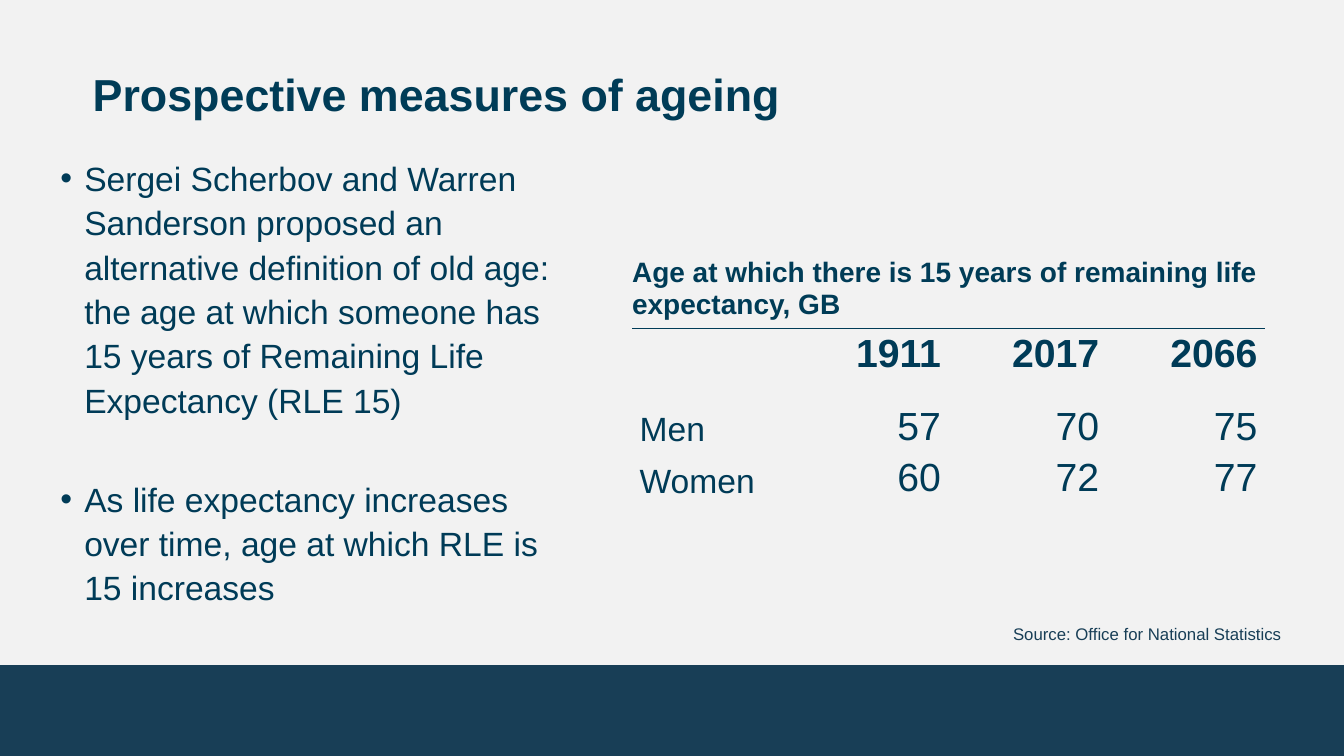
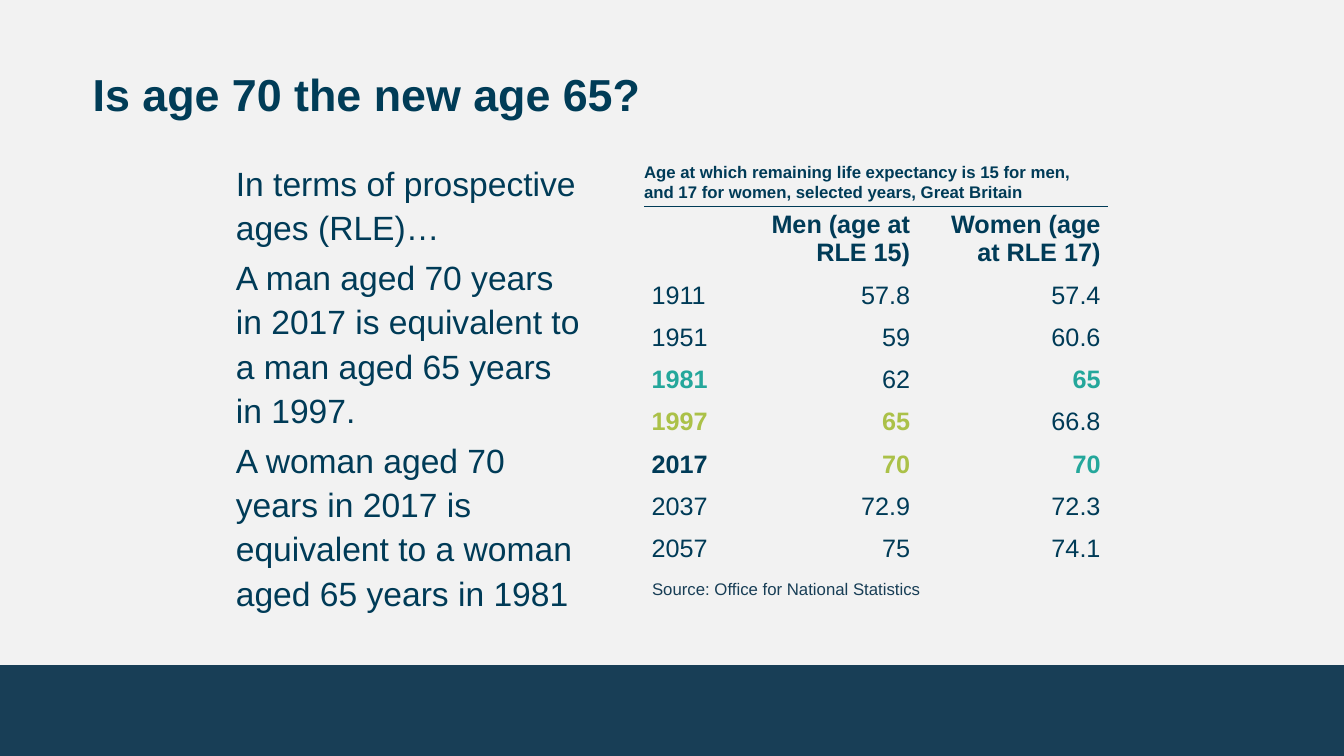
from lxml import etree
from pptx import Presentation
from pptx.dml.color import RGBColor as RGB
from pptx.enum.shapes import MSO_SHAPE as SHAPE
from pptx.enum.text import MSO_ANCHOR as ANCHOR, MSO_AUTO_SIZE as AUTO, PP_ALIGN as ALIGN
from pptx.oxml.ns import qn
from pptx.util import Pt

# Shared look
HUE = {"back": "F2F2F2", "band": "183E56", "title": "003C57",
       "ink": "003B57", "teal": "24A79B", "lime": "ABC148"}
FONT = "Arial"
WIDE, HIGH = 960, 540
BAND = 64.8
BARE = "{2D5ABB26-0587-4C30-8999-92F81FD0307C}"  # table style without grid
SOURCE = "Source: Office for National Statistics"

# Content: boxes are left, top, width, height
SLIDES = [
    {
        "title": "Prospective measures of ageing",
        "body": ["Sergei Scherbov and Warren Sanderson proposed an alternative "
                 "definition of old age: the age at which someone has 15 years of "
                 "Remaining Life Expectancy (RLE 15)",
                 "As life expectancy increases over time, age at which RLE is "
                 "15 increases"],
        "place": (43.2, 106.5, 371, 376.5),
        "style": {"bullet": True, "gap": 35.3},
        "caption": "Age at which there is 15 years of remaining life expectancy, GB",
        "head": (451.5, 183.6, 452, 50),
        "look": {"size": 20, "color": "title", "spacing": 0.95},
        "rows": [["", "1911", "2017", "2066"],
                 ["Men", "57", "70", "75"],
                 ["Women", "60", "72", "77"],
                 [""] * 4],
        "spot": (451.5, 234.7),
        "cols": [113] * 4,
        "tall": (52, 34.6),
        "sizes": (24, 28),
        "marks": {},
        "source": (723.6, 442, 220, 21.6),
    },
    {
        "title": "Is age 70 the new age 65?",
        "body": ["In terms of prospective ages (RLE)…",
                 "A man aged 70 years in 2017 is equivalent to a man aged 65 years "
                 "in 1997.",
                 "A woman aged 70 years in 2017 is equivalent to a woman aged "
                 "65 years in 1981"],
        "place": (168.5, 110, 250, 376.5),
        "style": {},
        "caption": "Age at which remaining life expectancy is 15 for men, "
                   "and 17 for women, selected years, Great Britain",
        "head": (460, 111.6, 331.5, 36),
        "look": {"size": 12, "inset": (0, 3.6, 7.2, 3.6), "anchor": ANCHOR.BOTTOM},
        "rows": [["", "Men (age at RLE 15)", "Women (age at RLE 17)"],
                 ["1911", "57.8", "57.4"],
                 ["1951", "59", "60.6"],
                 ["1981", "62", "65"],
                 ["1997", "65", "66.8"],
                 ["2017", "70", "70"],
                 ["2037", "72.9", "72.3"],
                 ["2057", "75", "74.1"]],
        "spot": (460, 147.6),
        "cols": [69, 126.5, 136],
        "tall": (46, 30.2),
        "sizes": (18, 18),
        "marks": {(3, 0): "teal", (3, 2): "teal", (4, 0): "lime", (4, 1): "lime",
                  (5, 0): "ink", (5, 1): "lime", (5, 2): "teal"},
        "source": (465.8, 409.7, 342.7, 21.6),
    },
]


def write(frame, lines, size=24, color="ink", bold=False, align=ALIGN.LEFT,
          spacing=1, after=0, gap=0, bullet=False):
    """Fill a text frame with one paragraph per line."""
    for i, line in enumerate(lines):
        para = frame.paragraphs[0] if i == 0 else frame.add_paragraph()
        para.text = line
        para.alignment, para.line_spacing = align, spacing
        para.space_before, para.space_after = Pt(gap if i else 0), Pt(after)
        if bullet:
            prop = para._p.get_or_add_pPr()
            prop.set("marL", str(Pt(17)))
            prop.set("indent", str(-Pt(17)))
            etree.SubElement(prop, qn("a:buFont")).set("typeface", FONT)
            etree.SubElement(prop, qn("a:buChar")).set("char", "•")
        font = para.font
        font.name, font.size, font.bold = FONT, Pt(size), bold
        font.color.rgb = RGB.from_string(HUE[color])


def frame_up(shape, inset=(0, 0, 0, 0), anchor=ANCHOR.TOP):
    frame = shape.text_frame
    frame.word_wrap, frame.auto_size = True, AUTO.NONE
    frame.vertical_anchor = anchor
    (frame.margin_left, frame.margin_top,
     frame.margin_right, frame.margin_bottom) = map(Pt, inset)
    return frame


def add_text(slide, box, lines, inset=(0, 3.6, 0, 3.6), anchor=ANCHOR.TOP, **look):
    shape = slide.shapes.add_textbox(*map(Pt, box))
    write(frame_up(shape, inset, anchor), lines, **look)


def top_line(cell):
    line = etree.Element(qn("a:lnT"), w=str(Pt(1)))
    fill = etree.SubElement(line, qn("a:solidFill"))
    etree.SubElement(fill, qn("a:srgbClr")).set("val", HUE["ink"])
    cell._tc.get_or_add_tcPr().insert(0, line)


def add_grid(slide, data):
    rows, cols = data["rows"], data["cols"]
    first, rest = data["tall"]
    talls = [first] + [rest] * (len(rows) - 1)
    holder = slide.shapes.add_table(len(rows), len(cols), *map(Pt, data["spot"]),
                                    Pt(sum(cols)), Pt(sum(talls)))
    grid = holder.table
    grid.first_row = grid.horz_banding = False
    next(holder.element.iter(qn("a:tableStyleId"))).text = BARE
    for col, width in zip(grid.columns, cols):
        col.width = Pt(width)
    for r, (row, tall) in enumerate(zip(rows, talls)):
        grid.rows[r].height = Pt(tall)
        for c, text in enumerate(row):
            cell = grid.cell(r, c)
            cell.fill.background()
            cell.margin_left = cell.margin_right = Pt(5.4)
            cell.margin_top = cell.margin_bottom = Pt(2.7)
            cell.vertical_anchor = ANCHOR.BOTTOM if r else ANCHOR.TOP
            if r == 0:
                top_line(cell)
            if text:
                mark = data["marks"].get((r, c))
                write(cell.text_frame, [text], size=data["sizes"][c > 0],
                      color=mark or "ink", bold=r == 0 or mark is not None,
                      align=ALIGN.RIGHT if c else ALIGN.LEFT)


def add_base(deck, title):
    """Make a slide with its band and title."""
    slide = deck.slides.add_slide(deck.slide_layouts[5])
    band = slide.shapes.add_shape(SHAPE.RECTANGLE, 0, Pt(HIGH - BAND),
                                  Pt(WIDE), Pt(BAND))
    band.shadow.inherit = False
    band.fill.solid()
    band.fill.fore_color.rgb = RGB.from_string(HUE["band"])
    band.line.fill.background()
    head = slide.shapes.title
    head.left, head.top, head.width, head.height = map(Pt, (66.2, 50.4, 828, 36.7))
    write(frame_up(head), [title], size=32, color="title", bold=True, spacing=0.95)
    return slide


def main():
    deck = Presentation()
    deck.slide_width, deck.slide_height = Pt(WIDE), Pt(HIGH)
    back = deck.slide_master.background.fill
    back.solid()
    back.fore_color.rgb = RGB.from_string(HUE["back"])
    for data in SLIDES:
        slide = add_base(deck, data["title"])
        add_text(slide, data["place"], data["body"], spacing=1.1, after=3.8,
                 **data["style"])
        add_grid(slide, data)
        add_text(slide, data["head"], [data["caption"]], bold=True,
                 **{"inset": (0, 0, 0, 0), **data["look"]})
        add_text(slide, data["source"], [SOURCE], inset=(0, 3.6, 7.2, 3.6),
                 anchor=ANCHOR.BOTTOM, size=12, color="band")
    deck.save("out.pptx")


if __name__ == "__main__":
    main()
